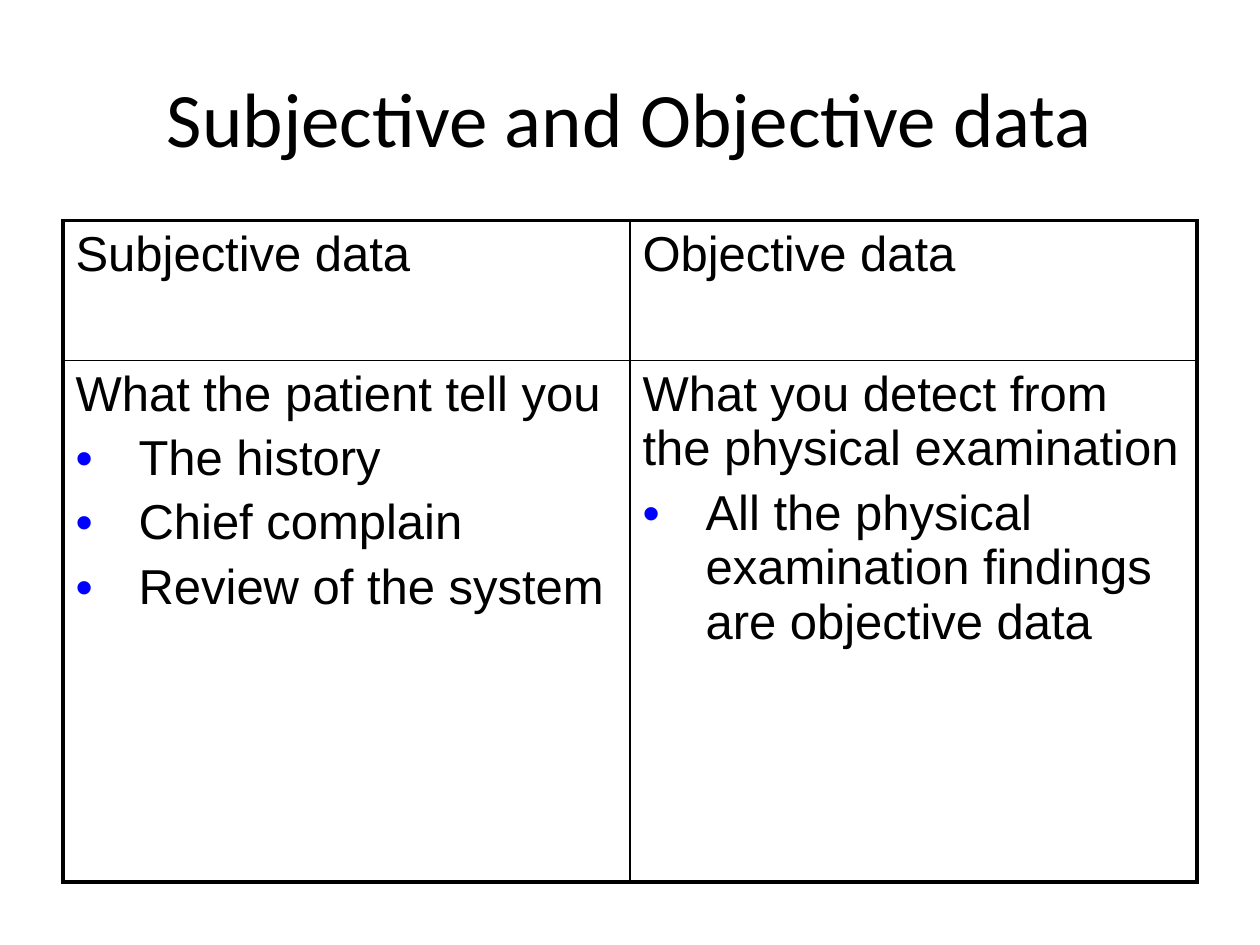
from dataclasses import dataclass

from lxml.etree import SubElement
from pptx import Presentation
from pptx.dml.color import RGBColor as Color
from pptx.enum.text import MSO_ANCHOR as Anchor, PP_ALIGN as Align
from pptx.oxml.ns import qn
from pptx.util import Pt


@dataclass(frozen=True)
class Theme:
    ink: str = "000000"
    bullet: str = "0000FF"
    title_font: str = "Calibri"
    body_font: str = "Arial"
    title_size: float = 44
    body_size: float = 28
    space_before: float = 5.6
    bullet_indent: float = 36
    outer_line: float = 2.25
    inner_line: float = 1


def apply_format(target, values):
    for name, value in values.items():
        setattr(target, name, value)


class SlideBuilder:
    def __init__(self, presentation, theme):
        self.theme = theme
        self.slide = presentation.slides.add_slide(presentation.slide_layouts[5])

    def set_font(self, font, name, size):
        apply_format(font, {"name": name, "size": Pt(size), "bold": False})
        font.color.rgb = Color.from_string(self.theme.ink)

    def title(self, text, left, top, width, height):
        shape = self.slide.shapes.title
        apply_format(shape, {"left": Pt(left), "top": Pt(top),
                             "width": Pt(width), "height": Pt(height)})
        frame = shape.text_frame
        apply_format(frame, {"text": text, "word_wrap": True,
                             "vertical_anchor": Anchor.MIDDLE})
        paragraph = frame.paragraphs[0]
        paragraph.alignment = Align.CENTER
        self.set_font(paragraph.runs[0].font, self.theme.title_font, self.theme.title_size)

    def bullet(self, paragraph):
        properties = paragraph._p.get_or_add_pPr()
        indent = Pt(self.theme.bullet_indent)
        properties.set("marL", str(indent))
        properties.set("indent", str(-indent))
        color = SubElement(properties, qn("a:buClr"))
        SubElement(color, qn("a:srgbClr"), val=self.theme.bullet)
        SubElement(properties, qn("a:buFont"), typeface=self.theme.body_font)
        SubElement(properties, qn("a:buChar"), char="•")

    def borders(self, cell, widths):
        """Draw left, right, top and bottom lines, which must precede the fill."""
        properties = cell._tc.get_or_add_tcPr()
        for index, (side, width) in enumerate(zip("LRTB", widths)):
            line = SubElement(properties, qn(f"a:ln{side}"), w=str(Pt(width)))
            fill = SubElement(line, qn("a:solidFill"))
            SubElement(fill, qn("a:srgbClr"), val=self.theme.ink)
            properties.insert(index, line)

    def cell_text(self, cell, lead, bullets):
        frame = cell.text_frame
        for index, text in enumerate([lead, *bullets]):
            paragraph = frame.add_paragraph() if index else frame.paragraphs[0]
            paragraph.space_before = Pt(self.theme.space_before)
            if index:
                self.bullet(paragraph)
            run = paragraph.add_run()
            run.text = text
            self.set_font(run.font, self.theme.body_font, self.theme.body_size)

    def table(self, rows, left, top, column_widths, row_heights):
        """Fill a table from rows of (lead text, bullet texts) cells."""
        table = self.slide.shapes.add_table(
            len(row_heights), len(column_widths), Pt(left), Pt(top),
            Pt(sum(column_widths)), Pt(sum(row_heights))).table
        apply_format(table, {"first_row": False, "horz_banding": False})
        for column, width in zip(table.columns, column_widths):
            column.width = Pt(width)
        for row, height in zip(table.rows, row_heights):
            row.height = Pt(height)
        last_row, last_column = len(row_heights) - 1, len(column_widths) - 1
        for r, row in enumerate(rows):
            for c, (lead, bullets) in enumerate(row):
                cell = table.cell(r, c)
                cell.fill.background()
                outer = (c == 0, c == last_column, r == 0, r == last_row)
                self.borders(cell, [self.theme.outer_line if edge else self.theme.inner_line
                                    for edge in outer])
                self.cell_text(cell, lead, bullets)


def main():
    presentation = Presentation()
    apply_format(presentation, {"slide_width": Pt(720), "slide_height": Pt(540)})
    builder = SlideBuilder(presentation, Theme())
    builder.title("Subjective and Objective data", 36, 21.6, 648, 90)
    rows = [
        [("Subjective data", []), ("Objective data", [])],
        [("What the patient tell you",
          ["The history", "Chief complain", "Review of the system"]),
         ("What you detect from the physical examination",
          ["All the physical examination findings are objective data"])],
    ]
    builder.table(rows, 36, 126, [324, 324], [80, 298])
    presentation.save("out.pptx")


if __name__ == "__main__":
    main()
